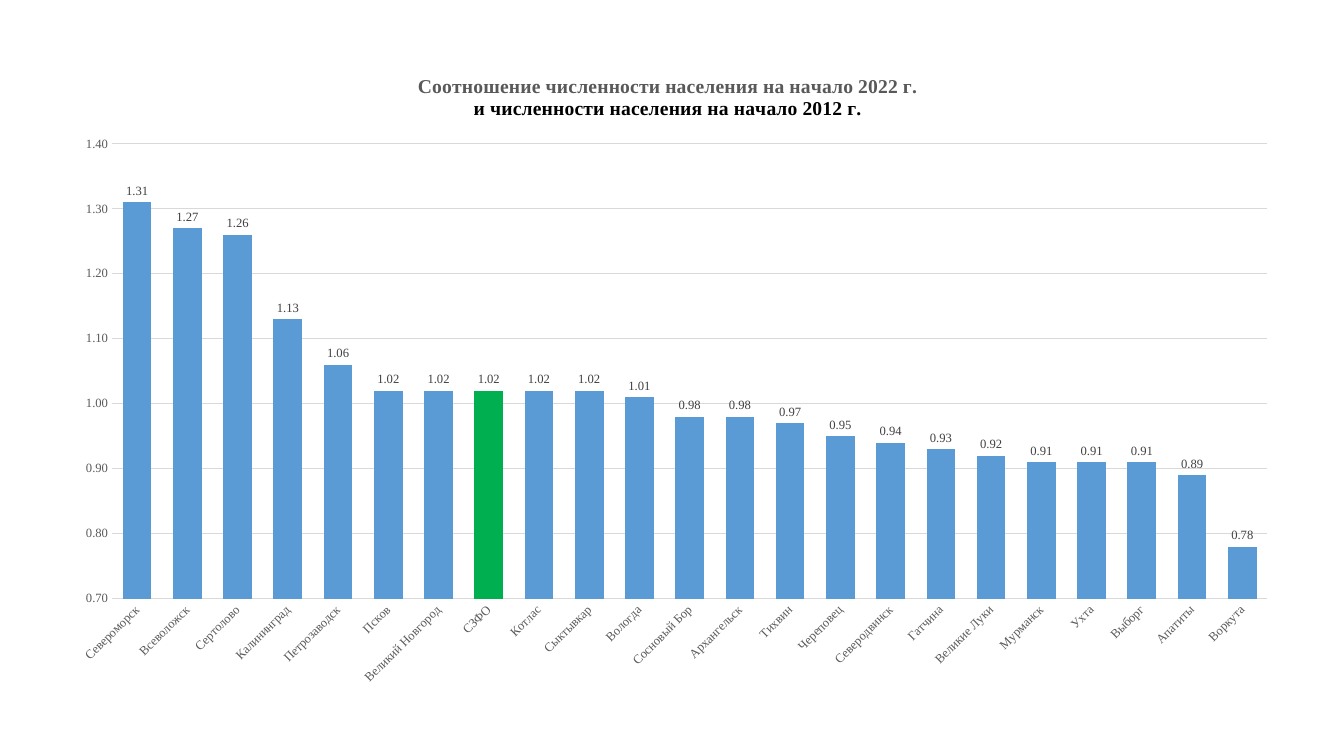
"""Builds a slide with a column chart of city population ratios."""
import pptx
import pptx.chart.data
import pptx.dml.color
import pptx.enum.chart
import pptx.oxml
import pptx.oxml.ns
import pptx.util

Pt = pptx.util.Pt
RGB = pptx.dml.color.RGBColor
enum = pptx.enum.chart
qn = pptx.oxml.ns.qn

TITLE = [
    "Соотношение численности населения на начало 2022 г.",
    "и численности населения на начало 2012 г.",
]
CITIES = [
    ("Североморск", 1.31), ("Всеволожск", 1.27), ("Сертолово", 1.26),
    ("Калининград", 1.13), ("Петрозаводск", 1.06), ("Псков", 1.02),
    ("Великий Новгород", 1.02), ("СЗФО", 1.02), ("Котлас", 1.02),
    ("Сыктывкар", 1.02), ("Вологда", 1.01), ("Сосновый Бор", 0.98),
    ("Архангельск", 0.98), ("Тихвин", 0.97), ("Череповец", 0.95),
    ("Северодвинск", 0.94), ("Гатчина", 0.93), ("Великие Луки", 0.92),
    ("Мурманск", 0.91), ("Ухта", 0.91), ("Выборг", 0.91),
    ("Апатиты", 0.89), ("Воркута", 0.78),
]
REGION = "СЗФО"
FACE = "Times New Roman"
BLUE = RGB(0x5B, 0x9B, 0xD5)
GREEN = RGB(0x00, 0xB0, 0x50)
GRAY = RGB(0x59, 0x59, 0x59)
DARK = RGB(0x40, 0x40, 0x40)
PALE = RGB(0xD9, 0xD9, 0xD9)
BLACK = RGB(0, 0, 0)


def style(font, size, color, bold=False):
    """Set face, size, colour and weight of a font."""
    font.name, font.size, font.bold = FACE, Pt(size), bold
    font.color.rgb = color


def rule(line):
    """Give a line the pale hairline look."""
    line.color.rgb = PALE
    line.width = Pt(0.75)


def place(part, index, target="", **box):
    """Fix the place of a chart part as shares of the chart."""
    old = part.find(qn("c:layout"))
    if old is not None:
        part.remove(old)
    inner = f'<c:layoutTarget val="{target}"/>' if target else ""
    inner += '<c:xMode val="edge"/><c:yMode val="edge"/>'
    inner += "".join(f'<c:{key} val="{val}"/>' for key, val in box.items())
    part.insert(index, pptx.oxml.parse_xml(
        f'<c:layout {pptx.oxml.ns.nsdecls("c")}>'
        f"<c:manualLayout>{inner}</c:manualLayout></c:layout>"))


def add_title(chart):
    """Write the two-line chart title."""
    chart.has_title = True
    title = chart.chart_title
    frame = title.text_frame
    frame.text = "\n".join(TITLE)
    for para, color in zip(frame.paragraphs, (GRAY, BLACK)):
        style(para.runs[0].font, 14, color, True)
    title.include_in_layout = False
    place(title._element, 1, x=0.29, y=0.03)


def format_axes(chart):
    """Format both axes and the grid."""
    for axis in (chart.category_axis, chart.value_axis):
        axis.major_tick_mark = axis.minor_tick_mark = enum.XL_TICK_MARK.NONE
        style(axis.tick_labels.font, 9, GRAY)
    cat, val = chart.category_axis, chart.value_axis
    rule(cat.format.line)
    cat._element.find(qn("c:txPr")).find(qn("a:bodyPr")).set("rot", "-2700000")
    val.format.line.fill.background()
    val.minimum_scale, val.maximum_scale, val.major_unit = 0.7, 1.4, 0.1
    val.has_major_gridlines = True
    rule(val.major_gridlines.format.line)
    val.tick_labels.number_format = "0.00"
    val.tick_labels.number_format_is_linked = False


def format_bars(plot):
    """Colour the columns and show their values."""
    plot.gap_width, plot.overlap = 75, -25
    plot.vary_by_categories = False
    bars = plot.series[0]
    bars.invert_if_negative = False
    for fill, color in (
        (bars.format.fill, BLUE),
        (bars.points[names.index(REGION)].format.fill, GREEN),
    ):
        fill.solid()
        fill.fore_color.rgb = color
    labels = bars.data_labels
    labels.show_value = True
    labels.position = enum.XL_LABEL_POSITION.OUTSIDE_END
    labels.number_format = "0.00"
    labels.number_format_is_linked = False
    style(labels.font, 9, DARK)


names, ratios = zip(*CITIES)
deck = pptx.Presentation()
deck.slide_width, deck.slide_height = Pt(960), Pt(540)
slide = deck.slides.add_slide(deck.slide_layouts[6])

data = pptx.chart.data.CategoryChartData(number_format="0.00")
data.categories = names
data.add_series("Series 1", ratios)
chart = slide.shapes.add_chart(
    enum.XL_CHART_TYPE.COLUMN_CLUSTERED,
    Pt(40.3), Pt(36.7), Pt(882.7), Pt(462.2), data).chart
chart.has_legend = False
style(chart.font, 10, BLACK)
add_title(chart)
format_axes(chart)
format_bars(chart.plots[0])
area = chart._chartSpace.find(qn("c:chart")).find(qn("c:plotArea"))
place(area, 0, "inner", x=0.045, y=0.143, w=0.935, h=0.703)

deck.save("out.pptx")
